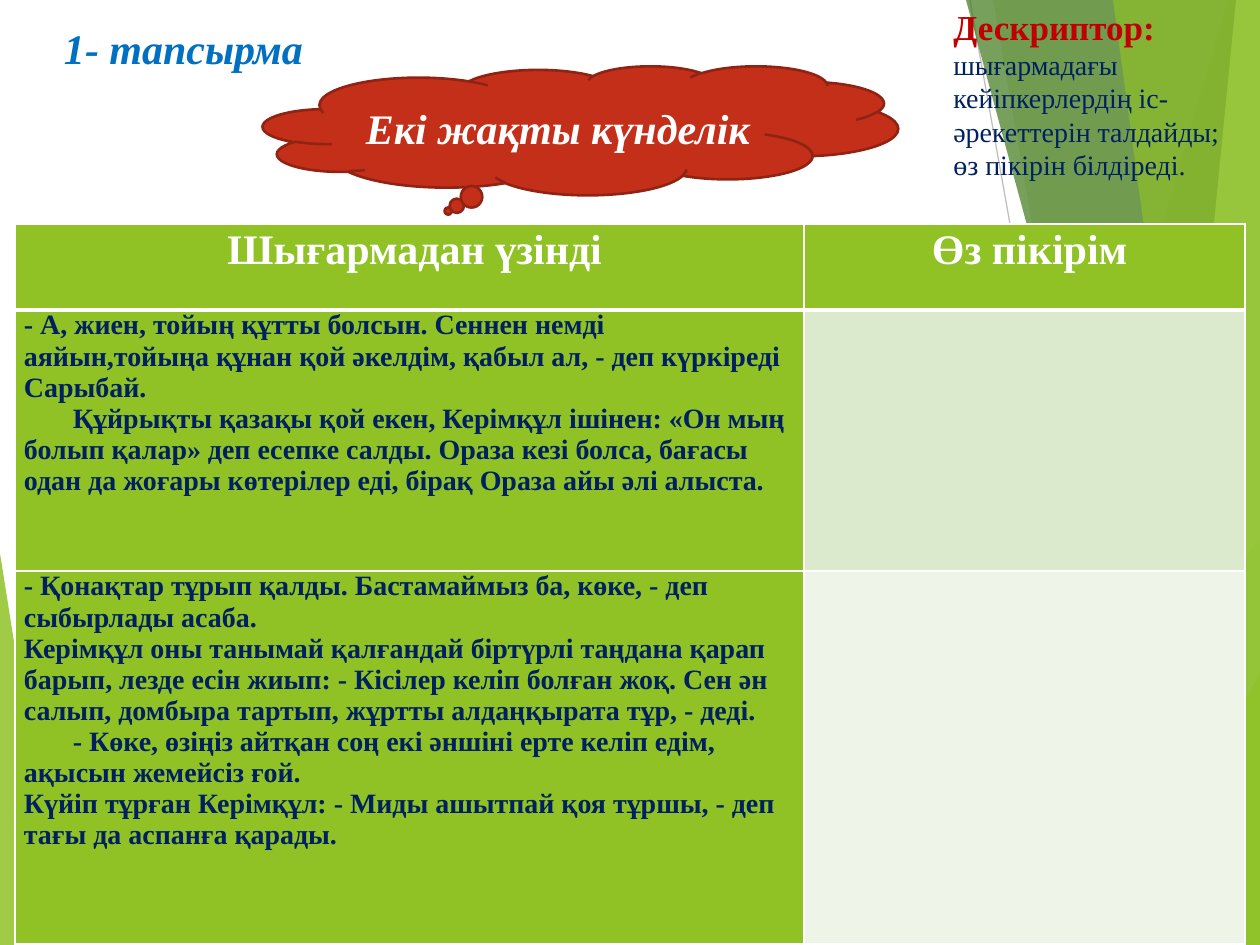
from dataclasses import dataclass

from lxml import etree
from pptx import Presentation
from pptx.dml.color import RGBColor
from pptx.enum.shapes import MSO_CONNECTOR, MSO_SHAPE
from pptx.enum.text import MSO_ANCHOR, MSO_AUTO_SIZE, PP_ALIGN
from pptx.oxml.ns import qn
from pptx.util import Emu, Pt

STRAIGHT = MSO_CONNECTOR.STRAIGHT
CLOUD = MSO_SHAPE.CLOUD_CALLOUT
MIDDLE = MSO_ANCHOR.MIDDLE
GROW = MSO_AUTO_SIZE.SHAPE_TO_FIT_TEXT
LEFT, CENTER = PP_ALIGN.LEFT, PP_ALIGN.CENTER

SCALE = 914400 / 126
WIDTH, HEIGHT = 1260, 945
FONT = "Times New Roman"

WHITE = RGBColor(0xFF, 0xFF, 0xFF)
GREEN = RGBColor(0x90, 0xC2, 0x26)
MID_GREEN = RGBColor(0x54, 0xA0, 0x21)
DARK_GREEN = RGBColor(0x3F, 0x78, 0x19)
LIME = RGBColor(0xC0, 0xE4, 0x74)
PALE = RGBColor(0xDB, 0xE9, 0xCD)
PALER = RGBColor(0xEE, 0xF4, 0xE8)
LIGHT_GRAY = RGBColor(0xD9, 0xD9, 0xD9)
GRAY = RGBColor(0xBF, 0xBF, 0xBF)
RED = RGBColor(0xC4, 0x2F, 0x1A)
DARK_RED = RGBColor(0x91, 0x23, 0x13)
CRIMSON = RGBColor(0xC0, 0x00, 0x00)
BLUE = RGBColor(0x00, 0x70, 0xC0)
NAVY = RGBColor(0x00, 0x20, 0x60)


@dataclass(frozen=True)
class Facet:
    points: tuple
    color: RGBColor
    opacity: int


@dataclass(frozen=True)
class Ray:
    start: tuple
    end: tuple
    color: RGBColor


@dataclass(frozen=True)
class Span:
    text: str
    size: int
    color: RGBColor
    bold: bool = True
    italic: bool = False


@dataclass(frozen=True)
class Para:
    spans: tuple
    align: PP_ALIGN = LEFT
    indent: int = 0
    line_spacing: float = 1.0


@dataclass(frozen=True)
class Cell:
    paras: tuple
    color: RGBColor
    bottom_border: int = 1


def px(length: int) -> Emu:
    return Emu(round(length * SCALE))


def side_band(top: int, bottom: int) -> tuple:
    return (top, 0), (bottom, HEIGHT), (WIDTH, HEIGHT), (WIDTH, 0)


def corner(left: int, top: int) -> tuple:
    return (left, HEIGHT), (WIDTH, top), (WIDTH, HEIGHT)


def header(text: str) -> Cell:
    span = Span(text, 24, WHITE)
    return Cell((Para((span,), CENTER, line_spacing=1.07),), GREEN, 3)


def quote(text: str, indent: int = 0) -> Para:
    return Para((Span(text, 16, NAVY),), indent=indent)


FACETS_BEHIND = (Facet(((0, 553), (62, HEIGHT), (0, HEIGHT)), GREEN, 85),)
RAYS = (
    Ray((707, HEIGHT), (WIDTH, 576), LIGHT_GRAY),
    Ray((970, 0), (1139, HEIGHT), GRAY),
)
FACETS_FRONT = (
    Facet(side_band(1228, 950), GREEN, 30),
    Facet(side_band(993, 1158), GREEN, 20),
    Facet(corner(915, 540), MID_GREEN, 72),
    Facet(side_band(966, 1222), DARK_GREEN, 70),
    Facet(side_band(1236, 1143), LIME, 70),
    Facet(side_band(1113, 1242), GREEN, 65),
    Facet(corner(1110, 674), GREEN, 80),
)
COLUMNS = (789, 441)
ROWS = (86, 261, 373)
CELLS = (
    (header(" Шығармадан үзінді"), header(" Өз пікірім")),
    (
        Cell((
            quote("- А, жиен, тойың құтты болсын. Сеннен немді аяйын,тойыңа құнан қой "
                  "әкелдім, қабыл ал, - деп күркіреді Сарыбай."),
            quote("Құйрықты қазақы қой екен, Керімқұл ішінен: «Он мың болып қалар» деп "
                  "есепке салды. Ораза кезі болса, бағасы одан да жоғары көтерілер еді, "
                  "бірақ Ораза айы әлі алыста.", 49),
        ), GREEN),
        Cell((), PALE),
    ),
    (
        Cell((
            quote("- Қонақтар тұрып қалды. Бастамаймыз ба, көке, - деп сыбырлады асаба."),
            quote("Керімқұл оны танымай қалғандай біртүрлі таңдана қарап барып, лезде есін "
                  "жиып: - Кісілер келіп болған жоқ. Сен ән салып, домбыра тартып, жұртты "
                  "алдаңқырата тұр, - деді."),
            quote("- Көке, өзіңіз айтқан соң екі әншіні ерте келіп едім, ақысын жемейсіз "
                  "ғой.", 49),
            quote("Күйіп тұрған Керімқұл: - Миды ашытпай қоя тұршы, - деп тағы да аспанға "
                  "қарады."),
        ), GREEN),
        Cell((), PALER),
    ),
)


def write(frame, paras: tuple) -> None:
    for index, para in enumerate(paras):
        paragraph = frame.add_paragraph() if index else frame.paragraphs[0]
        paragraph.alignment = para.align
        paragraph.line_spacing = para.line_spacing
        if para.indent:
            paragraph._p.get_or_add_pPr().set("indent", str(px(para.indent)))
        for span in para.spans:
            run = paragraph.add_run()
            run.text = span.text
            run.font.name = FONT
            run.font.size = Pt(span.size)
            run.font.color.rgb = span.color
            run.font.bold = span.bold
            run.font.italic = span.italic


def draw_facet(page, facet: Facet) -> None:
    builder = page.shapes.build_freeform(*facet.points[0], scale=SCALE)
    builder.add_line_segments(facet.points[1:], close=True)
    shape = builder.convert_to_shape()
    shape.shadow.inherit = False
    shape.fill.solid()
    shape.fill.fore_color.rgb = facet.color
    shape.line.fill.background()
    color = shape.element.xpath("./p:spPr/a:solidFill/a:srgbClr")[0]
    etree.SubElement(color, qn("a:alpha"), val=str(facet.opacity * 1000))


def draw_ray(page, ray: Ray) -> None:
    line = page.shapes.add_connector(STRAIGHT, *map(px, ray.start + ray.end))
    line.line.color.rgb = ray.color
    line.line.width = Pt(0.75)
    etree.SubElement(line.element.spPr, qn("a:effectLst"))


def draw_cloud(page, para: Para) -> None:
    cloud = page.shapes.add_shape(CLOUD, px(263), px(66), px(635), px(129))
    cloud.shadow.inherit = False
    cloud.fill.solid()
    cloud.fill.fore_color.rgb = RED
    cloud.line.color.rgb = DARK_RED
    cloud.line.width = Pt(1.5)
    cloud.text_frame.vertical_anchor = MIDDLE
    write(cloud.text_frame, (para,))


def draw_text(page, bounds: tuple, para: Para) -> None:
    frame = page.shapes.add_textbox(*map(px, bounds)).text_frame
    frame.word_wrap = True
    frame.auto_size = GROW
    write(frame, (para,))


def draw_border(target, side: str, width: int) -> None:
    properties = target._tc.get_or_add_tcPr()
    border = etree.SubElement(properties, qn(f"a:ln{side}"), w=str(Pt(width)))
    fill = etree.SubElement(border, qn("a:solidFill"))
    etree.SubElement(fill, qn("a:srgbClr"), val=str(WHITE))


def draw_table(page) -> None:
    table = page.shapes.add_table(
        len(ROWS), len(COLUMNS), px(15), px(224), px(sum(COLUMNS)), px(sum(ROWS))
    ).table
    for column, width in zip(table.columns, COLUMNS):
        column.width = px(width)
    for row, height, cells in zip(table.rows, ROWS, CELLS):
        row.height = px(height)
        for target, cell in zip(row.cells, cells):
            target.margin_left = target.margin_right = px(9)
            target.margin_top = target.margin_bottom = 0
            for side in "LRT":
                draw_border(target, side, 3 if side == "T" and row is table.rows[1] else 1)
            draw_border(target, "B", cell.bottom_border)
            target.fill.solid()
            target.fill.fore_color.rgb = cell.color
            write(target.text_frame, cell.paras)


def main() -> None:
    deck = Presentation()
    deck.slide_width, deck.slide_height = px(WIDTH), px(HEIGHT)
    page = deck.slides.add_slide(deck.slide_layouts[6])
    for facet in FACETS_BEHIND:
        draw_facet(page, facet)
    for ray in RAYS:
        draw_ray(page, ray)
    for facet in FACETS_FRONT:
        draw_facet(page, facet)
    draw_cloud(page, Para((Span("Екі жақты күнделік", 24, WHITE, italic=True),), CENTER))
    draw_table(page)
    draw_text(page, (-25, 16, 417, 63),
              Para((Span("1- тапсырма", 24, BLUE, italic=True),), CENTER))
    draw_text(page, (941, -1, 318, 190), Para((
        Span("Дескриптор: ", 20, CRIMSON),
        Span("шығармадағы кейіпкерлердің іс-әрекеттерін талдайды; өз пікірін білдіреді.",
             16, NAVY, bold=False),
    )))
    deck.save("out.pptx")


if __name__ == "__main__":
    main()
